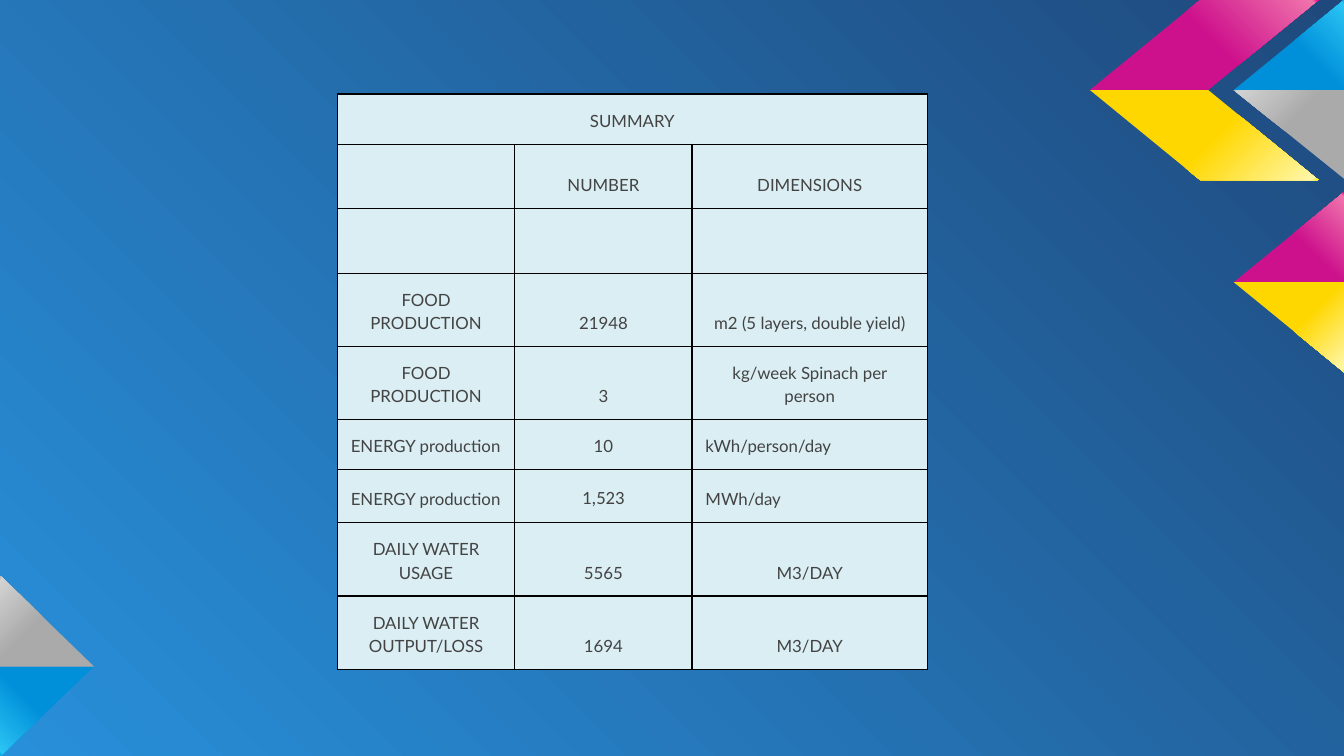
from typing import NamedTuple

from lxml import etree
from pptx import Presentation
from pptx import util as u
from pptx.dml.color import RGBColor
from pptx.enum import text
from pptx.oxml import ns

COLORS = {"ink": "434343", "cell": "DAEEF3", "border": "000000"}
BACKGROUND = [(0, "2890DA"), (100, "1F497D")]
RAMPS = {
    "blue": ("0090DA", "2BC4F3", "00AEEE"),
    "gray": ("AAAAAA", "D2D2D2", "B9B9B9"),
    "pink": ("CD118C", "F074AC", "EB008B"),
    "yellow": ("FFD700", "FFF7A9", "FFF100"),
}
CENTER, LEFT = text.PP_ALIGN.CENTER, text.PP_ALIGN.LEFT


class Facet(NamedTuple):
    ramp: str
    angle: int
    points: list[tuple[float, float]]


class Row(NamedTuple):
    height: float
    texts: tuple[str, ...]
    aligns: tuple = (CENTER, CENTER, CENTER)


FACETS = [
    Facet("blue", 135, [(0.7, 4.96), (0, 4.96), (0, 5.62), (0.01, 5.62)]),
    Facet("gray", 225, [(0.7, 4.96), (0.01, 4.29), (0, 4.29), (0, 4.96)]),
    Facet("blue", 315, [(10, 0), (9.18, 0.67), (10, 0.67)]),
    Facet("gray", 225, [(9.18, 0.67), (10, 1.33), (10, 0.67)]),
    Facet("pink", 315, [(8.99, 0.67), (9.81, 0), (8.93, 0), (8.11, 0.67)]),
    Facet("pink", 315, [(10, 1.43), (9.18, 2.1), (10, 2.1)]),
    Facet("yellow", 45, [(9.18, 2.1), (10, 2.77), (10, 2.1)]),
    Facet("yellow", 45, [(8.99, 0.67), (9.81, 1.34), (8.93, 1.34), (8.11, 0.67)]),
]
COLUMNS = [1.32, 1.32, 1.75]
OUTER_LEFT = (LEFT, CENTER, LEFT)
ROWS = [
    Row(0.37, ("SUMMARY", "", "")),
    Row(0.48, ("", "NUMBER", "DIMENSIONS")),
    Row(0.48, ("", "", "")),
    Row(0.54, ("FOOD PRODUCTION", "21948", "m2 (5 layers, double yield)")),
    Row(0.54, ("FOOD PRODUCTION", "3", "kg/week Spinach per person")),
    Row(0.37, ("ENERGY production", "10", "kWh/person/day"), OUTER_LEFT),
    Row(0.39, ("ENERGY production", "1,523", "MWh/day"), OUTER_LEFT),
    Row(0.54, ("DAILY WATER USAGE", "5565", "M3/DAY")),
    Row(0.54, ("DAILY WATER OUTPUT/LOSS", "1694", "M3/DAY")),
]


def set_gradient(properties, stops: list[tuple[int, str]], angle: int | None = None) -> None:
    gradient = etree.Element(ns.qn("a:gradFill"), rotWithShape="1")
    stop_list = etree.SubElement(gradient, ns.qn("a:gsLst"))
    for position, color in stops:
        stop = etree.SubElement(stop_list, ns.qn("a:gs"), pos=str(position * 1000))
        etree.SubElement(stop, ns.qn("a:srgbClr"), val=color)
    if angle is None:
        circle = etree.SubElement(gradient, ns.qn("a:path"), {"path": "circle"})
        etree.SubElement(circle, ns.qn("a:fillToRect"), t="100000", r="100000")
    else:
        etree.SubElement(gradient, ns.qn("a:lin"), ang=str(angle * 60000), scaled="0")
    properties.replace(properties.find(ns.qn("a:solidFill")), gradient)


def paint_background(page) -> None:
    page.background.fill.solid()
    set_gradient(page.element.find(".//" + ns.qn("p:bgPr")), BACKGROUND)


def draw_facet(page, facet: Facet) -> None:
    points = [(u.Inches(x), u.Inches(y)) for x, y in facet.points]
    builder = page.shapes.build_freeform(*points[0])
    builder.add_line_segments(points[1:], close=True)
    shape = builder.convert_to_shape()
    shape.shadow.inherit = False
    shape.line.fill.background()
    shape.fill.solid()
    base, light, end = RAMPS[facet.ramp]
    stops = [(0, base), (54, base), (98, light), (100, end)]
    set_gradient(shape.element.spPr, stops, facet.angle)


def add_borders(cell) -> None:
    properties = cell._tc.get_or_add_tcPr()
    for side in ("lnL", "lnR", "lnT", "lnB"):
        line = etree.SubElement(properties, ns.qn(f"a:{side}"), w=str(u.Pt(0.75)))
        fill = etree.SubElement(line, ns.qn("a:solidFill"))
        etree.SubElement(fill, ns.qn("a:srgbClr"), val=COLORS["border"])


def format_cell(cell, words: str, align) -> None:
    add_borders(cell)
    cell.fill.solid()
    cell.fill.fore_color.rgb = RGBColor.from_string(COLORS["cell"])
    if not words:
        return
    cell.vertical_anchor = text.MSO_ANCHOR.BOTTOM
    cell.margin_left = cell.margin_right = u.Inches(0.1)
    cell.margin_top = cell.margin_bottom = u.Inches(0.1)
    para = cell.text_frame.paragraphs[0]
    para.text = words
    para.alignment = align
    para.line_spacing = 1.15
    font = para.runs[0].font
    font.name, font.size = ("Calibri", u.Pt(10)) if words == "1,523" else ("Lato", u.Pt(9))
    font.color.rgb = RGBColor.from_string(COLORS["ink"])


def draw_summary(page) -> None:
    frame = page.shapes.add_table(
        len(ROWS), len(COLUMNS), u.Inches(2.51), u.Inches(0.7),
        u.Inches(sum(COLUMNS)), u.Inches(sum(row.height for row in ROWS)),
    )
    table = frame.table
    table.first_row = table.horz_banding = False
    for column, width in zip(table.columns, COLUMNS):
        column.width = u.Inches(width)
    for index, row in enumerate(ROWS):
        table.rows[index].height = u.Inches(row.height)
        for position, (words, align) in enumerate(zip(row.texts, row.aligns)):
            format_cell(table.cell(index, position), words, align)
    table.cell(0, 0).merge(table.cell(0, len(COLUMNS) - 1))


def main() -> None:
    deck = Presentation()
    deck.slide_width = u.Inches(10)
    deck.slide_height = deck.slide_width * 9 // 16
    page = deck.slides.add_slide(deck.slide_layouts.get_by_name("Blank"))
    paint_background(page)
    for facet in FACETS:
        draw_facet(page, facet)
    draw_summary(page)
    deck.save("out.pptx")


if __name__ == "__main__":
    main()
